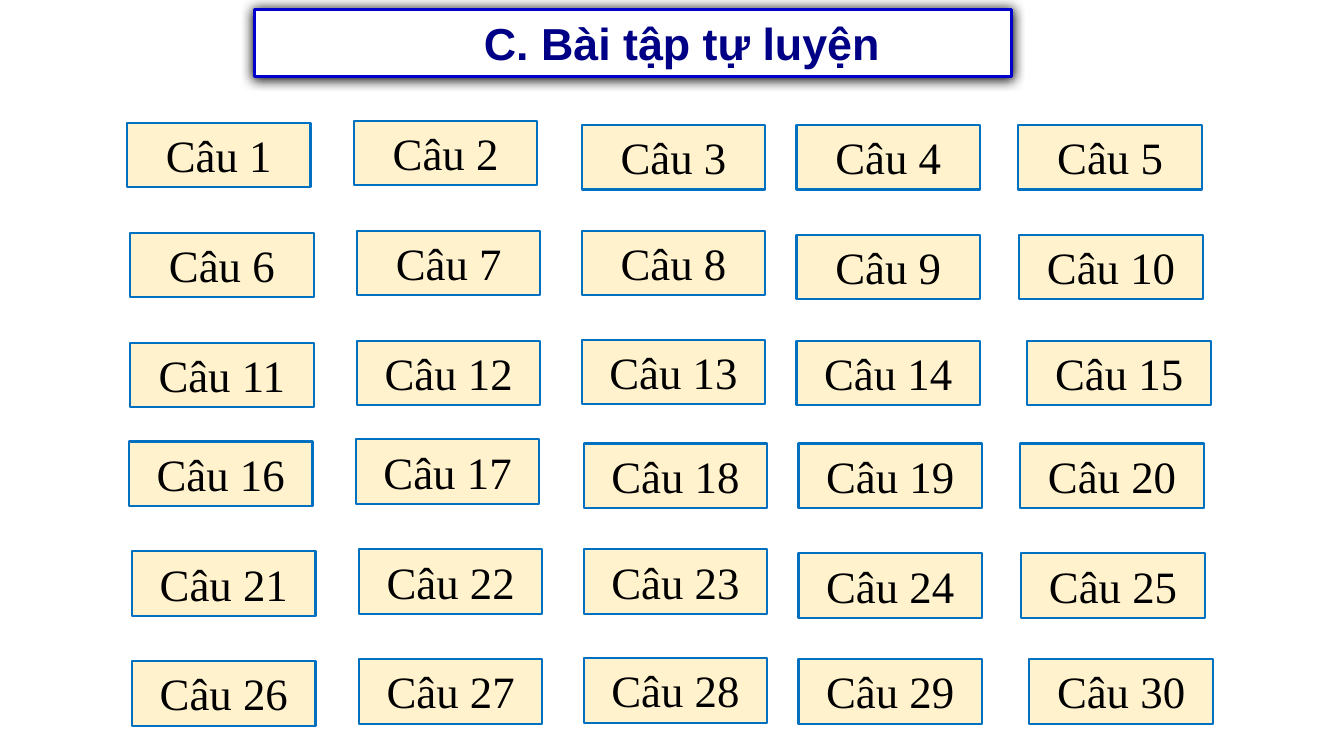
import pptx
import pptx.dml.color
import pptx.enum.shapes
import pptx.enum.text
import pptx.oxml
import pptx.oxml.ns
import pptx.util

Inches, Pt = pptx.util.Inches, pptx.util.Pt
Anchor, Align = pptx.enum.text.MSO_ANCHOR, pptx.enum.text.PP_ALIGN
Fit = pptx.enum.text.MSO_AUTO_SIZE
NS = pptx.oxml.ns.nsdecls("a")

# Left and top of each question box in one block of three rows
BLOCK = [
    [(1.26, 1.22), (3.51, 1.2), (5.77, 1.24), (7.9, 1.24), (10.1, 1.24)],
    [(1.29, 2.31), (3.54, 2.29), (5.77, 2.29), (7.9, 2.33), (10.11, 2.33)],
    [(1.29, 3.4), (3.54, 3.38), (5.77, 3.37), (7.9, 3.38), (10.19, 3.38)],
]
STEP = (0.02, 3.16)  # from the first block to the second


def color(code):
    return pptx.dml.color.RGBColor.from_string(code)


def paint(shape, fill, line, width):
    shape.fill.solid()
    shape.fill.fore_color.rgb = color(fill)
    shape.line.color.rgb = color(line)
    shape.line.width = Pt(width)


def write(shape, text, font, ink, bold=False):
    para = shape.text_frame.paragraphs[0]
    para.alignment = Align.CENTER
    run = para.add_run()
    run.text = text
    run.font.name, run.font.size, run.font.bold = font, Pt(32), bold
    run.font.color.rgb = color(ink)


def banner(slide, left, top, width, height):
    """Title in a pill with a soft shadow."""
    title = slide.shapes.title
    title.left, title.top = Inches(left), Inches(top)
    title.width, title.height = Inches(width), Inches(height)

    # Pill outline
    props = title._element.spPr
    props.append(pptx.oxml.parse_xml(
        f'<a:prstGeom {NS} prst="roundRect"><a:avLst>'
        '<a:gd name="adj" fmla="val 50000"/></a:avLst></a:prstGeom>'))
    paint(title, "FFFFFF", "0000CC", 2.25)

    # Shadow straight down
    props.append(pptx.oxml.parse_xml(
        f'<a:effectLst {NS}><a:outerShdw blurRad="{Pt(8.5)}" dist="{Pt(1)}" '
        'dir="5400000" algn="t" rotWithShape="0">'
        '<a:srgbClr val="000000"/></a:outerShdw></a:effectLst>'))

    # Text, set right of centre by the wide left margin
    frame = title.text_frame
    frame.auto_size = Fit.NONE
    frame.word_wrap = True
    frame.vertical_anchor = Anchor.MIDDLE
    frame.margin_left, frame.margin_right = Inches(1.08), Inches(0.1)
    frame.margin_top = frame.margin_bottom = Inches(0.05)
    write(title, "C. Bài tập tự luyện", "Arial", "000086", True)


def card(slide, left, top, width, height, label):
    """One question box."""
    box = slide.shapes.add_shape(
        pptx.enum.shapes.MSO_SHAPE.RECTANGLE,
        Inches(left), Inches(top), Inches(width), Inches(height))
    box.shadow.inherit = False
    paint(box, "FFF2CC", "0070C0", 1.5)
    box.text_frame.word_wrap = True
    box.text_frame.auto_size = Fit.SHAPE_TO_FIT_TEXT
    box.text_frame.vertical_anchor = Anchor.TOP
    write(box, label, "Times New Roman", "000000")


def cards(slide, right, down, first):
    """A block of question boxes, moved right and down."""
    spots = [spot for row in BLOCK for spot in row]
    for num, (left, top) in enumerate(spots, first):
        card(slide, left + right, top + down, 1.82, 0.64, f"Câu {num}")


def main():
    deck = pptx.Presentation()
    deck.slide_width, deck.slide_height = Inches(13.33), Inches(7.5)
    slide = deck.slides.add_slide(deck.slide_layouts.get_by_name("Title Only"))
    banner(slide, 2.52, 0.09, 7.51, 0.67)
    cards(slide, 0, 0, 1)
    cards(slide, *STEP, 16)
    deck.save("out.pptx")


if __name__ == "__main__":
    main()
